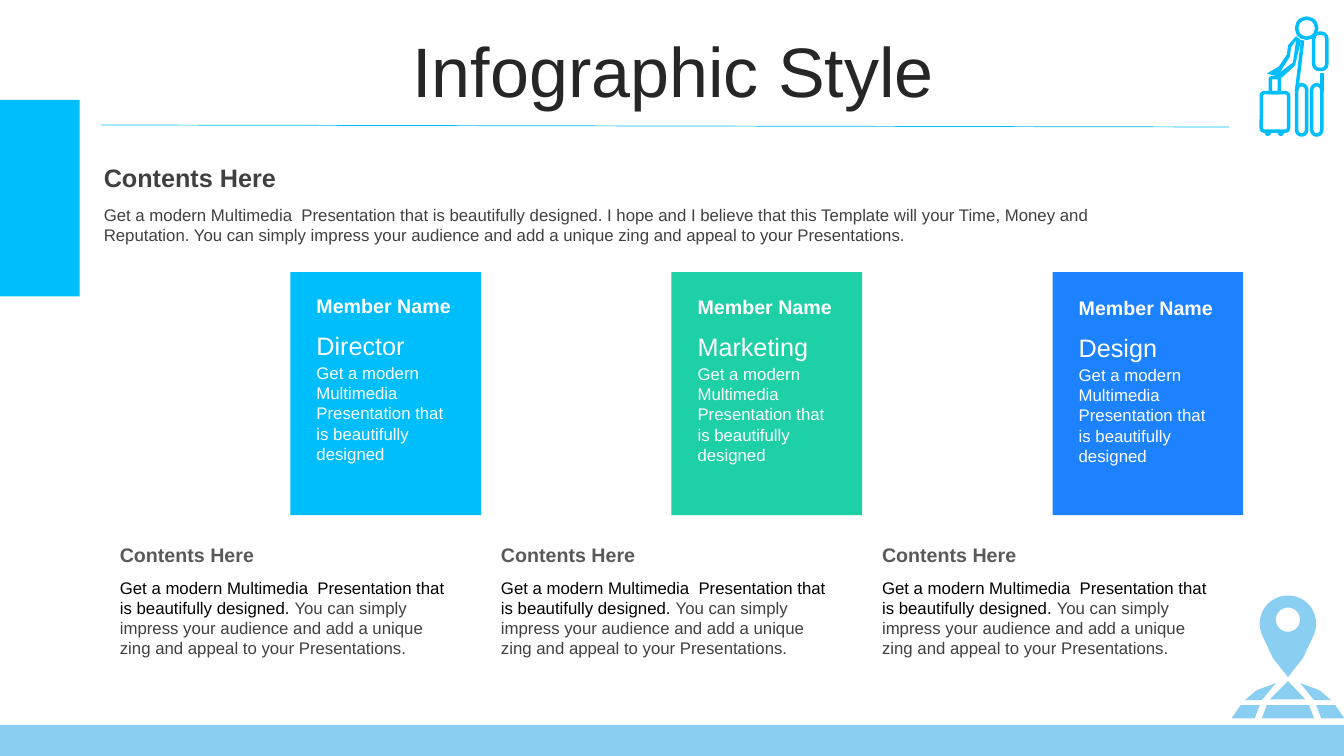
from dataclasses import dataclass
from math import cos, radians, sin

from lxml.etree import SubElement
from pptx import Presentation
from pptx.dml.color import RGBColor
from pptx.enum.shapes import MSO_CONNECTOR as Connector, MSO_SHAPE as Shape
from pptx.enum.text import MSO_ANCHOR as Anchor, MSO_AUTO_SIZE as AutoSize, PP_ALIGN as Align
from pptx.oxml.ns import qn
from pptx.util import Inches, Pt


@dataclass(frozen=True)
class Theme:
    font: str = "Arial"
    cyan: str = "00BDFB"
    green: str = "1ED0A6"
    blue: str = "1C82FF"
    sky: str = "8ACFF1"
    white: str = "FFFFFF"
    black: str = "000000"
    title_ink: str = "262626"
    ink: str = "404040"
    heading_ink: str = "595959"
    title_size: int = 50
    heading_size: int = 18
    label_size: int = 14
    body_size: int = 12


def write(frame, text, *, font, size, color, bold=False, align=None, spacing=None,
          anchor=Anchor.TOP, fit=AutoSize.NONE, left_inset=0.1):
    frame.word_wrap = True
    frame.auto_size = fit
    frame.vertical_anchor = anchor
    frame.margin_left = Inches(left_inset)
    frame.margin_right = Inches(0.1)
    frame.margin_top = frame.margin_bottom = Inches(0.05)
    paragraph = frame.paragraphs[0]
    paragraph.alignment = align
    paragraph.line_spacing = spacing
    for words, ink in ([(text, color)] if isinstance(text, str) else text):
        run = paragraph.add_run()
        run.text = words
        run.font.name = font
        run.font.size = Pt(size)
        run.font.bold = bold
        run.font.color.rgb = RGBColor.from_string(ink)


def arc(x, y, radius, start=0, end=360):
    steps = 36
    angles = [radians(start + (end - start) * i / steps) for i in range(steps + 1)]
    return [(x + radius * cos(a), y + radius * sin(a)) for a in angles]


class Board:
    def __init__(self, slide, theme):
        self.shapes = slide.shapes
        self.theme = theme

    def paint(self, shape, color):
        shape.shadow.inherit = False
        shape.fill.solid()
        shape.fill.fore_color.rgb = RGBColor.from_string(color)
        shape.line.fill.background()

    def title(self, text, box):
        heading = self.shapes.title
        heading.left, heading.top, heading.width, heading.height = map(Inches, box)
        write(heading.text_frame, text, font=self.theme.font, size=self.theme.title_size,
              color=self.theme.title_ink, align=Align.CENTER, spacing=0.8, anchor=Anchor.MIDDLE)

    def text(self, text, box, **style):
        frame = self.shapes.add_textbox(*map(Inches, box)).text_frame
        write(frame, text, font=self.theme.font, **style)

    def block(self, box, color):
        self.paint(self.shapes.add_shape(Shape.RECTANGLE, *map(Inches, box)), color)

    def ring(self, box, color, weight, kind=Shape.ROUNDED_RECTANGLE, rounding=None):
        ring = self.shapes.add_shape(kind, *map(Inches, box))
        ring.shadow.inherit = False
        ring.fill.background()
        ring.line.color.rgb = RGBColor.from_string(color)
        ring.line.width = Pt(weight)
        if rounding is not None:
            ring.adjustments[0] = rounding

    def rule(self, start, end, color, weight):
        line = self.shapes.add_connector(Connector.STRAIGHT, *map(Inches, start + end))
        line.line.color.rgb = RGBColor.from_string(color)
        line.line.width = Pt(weight)
        SubElement(line._element.spPr, qn("a:effectLst"))

    def outline(self, contours, color):
        scaled = [[(x * 1000, y * 1000) for x, y in contour] for contour in contours]
        builder = self.shapes.build_freeform(*scaled[0][0], scale=Inches(0.001))
        builder.add_line_segments(scaled[0][1:], close=True)
        for contour in scaled[1:]:
            builder.move_to(*contour[0])
            builder.add_line_segments(contour[1:], close=True)
        self.paint(builder.convert_to_shape(), color)

    def map_pin(self, axis, color):
        def mirror(points):
            return [(2 * axis - x, y) for x, y in points]

        drop = [(axis, 6.72), (axis - 0.15, 6.53)] + arc(axis, 6.19, 0.28, 158, 382)
        self.outline([drop + [(axis + 0.15, 6.53)], arc(axis, 6.15, 0.12)], color)
        self.outline([[(axis, 6.76), (12.95, 6.94), (12.6, 6.94)]], color)
        front = [(12.52, 7.13), (12.57, 7)]
        self.outline([front + mirror(front)[::-1]], color)
        for tile in ([(12.5, 7), (12.45, 7.13), (12.22, 7.13), (12.31, 7)],
                     [(12.66, 6.78), (12.52, 6.95), (12.35, 6.95), (12.47, 6.85)]):
            self.outline([tile], color)
            self.outline([mirror(tile)], color)

    def traveller(self, color):
        stroke = 2.5
        self.ring((12.86, 0.18, 0.2, 0.2), color, stroke, Shape.OVAL)
        self.ring((12.51, 0.92, 0.27, 0.38), color, stroke, rounding=0.1)
        self.ring((12.6, 0.77, 0.09, 0.15), color, stroke)
        for wheel in (12.58, 12.71):
            self.outline([arc(wheel, 1.32, 0.03)], color)
        for leg in (12.86, 13.01):
            self.ring((leg, 0.84, 0.1, 0.5), color, stroke, rounding=0.5)
        self.ring((13.03, 0.33, 0.13, 0.36), color, stroke, rounding=0.4)
        self.rule((12.92, 0.4), (12.86, 0.9), color, stroke)
        self.rule((13.11, 0.72), (13.11, 0.9), color, stroke)
        sleeve = [(12.86, 0.36), (12.78, 0.45), (12.77, 0.54), (12.69, 0.66),
                  (12.57, 0.73), (12.72, 0.77), (12.85, 0.65), (12.91, 0.4)]
        gap = [(12.86, 0.4), (12.81, 0.47), (12.8, 0.56), (12.7, 0.72), (12.83, 0.62)]
        self.outline([sleeve, gap], color)


def main():
    deck = Presentation()
    deck.slide_width, deck.slide_height = Inches(13.33), Inches(7.5)
    theme = Theme()
    board = Board(deck.slides.add_slide(deck.slide_layouts[5]), theme)

    offer = "Get a modern Multimedia  Presentation that is beautifully designed"
    appeal = "impress your audience and add a unique zing and appeal to your Presentations."
    heading = "Contents Here"
    members = [("Director", theme.cyan), ("Marketing", theme.green), ("Design", theme.blue)]
    pitch = 3.78

    for column, (_, color) in enumerate(members):
        board.block((2.88 + pitch * column, 2.7, 1.89, 2.41), color)
    board.block((0, 7.19, 13.33, 0.31), theme.sky)
    board.map_pin(12.78, theme.sky)

    board.title("Infographic Style", (0.35, 0.37, 12.66, 0.79))
    board.text(f"{offer}. I hope and I believe that this Template will your Time, Money and "
               f"Reputation. You can simply {appeal}", (1.03, 1.98, 10, 0.61),
               size=theme.body_size, color=theme.ink, left_inset=0)
    board.text(heading, (1.03, 1.58, 8.74, 0.36), size=theme.heading_size, color=theme.ink,
               bold=True, anchor=Anchor.MIDDLE, left_inset=0)

    grow = AutoSize.SHAPE_TO_FIT_TEXT
    for column, (role, _) in enumerate(members):
        left, top = 3.04 + pitch * column, 2.87 + 0.01 * column
        board.text(offer, (left, top + 0.68, 1.58, 1.11), size=theme.body_size,
                   color=theme.white, fit=grow)
        board.text(role, (left, top + 0.36, 1.58, 0.3), size=theme.heading_size,
                   color=theme.white, fit=grow)
        board.text("Member Name", (left, top, 1.58, 0.34), size=theme.label_size,
                   color=theme.white, bold=True, fit=grow)

        left = 1.09 + pitch * column
        board.text(heading, (left, 5.34, 3.45, 0.34), size=theme.label_size,
                   color=theme.heading_ink, bold=True, fit=grow)
        board.text([(f"{offer}. ", theme.black), (f"You can simply {appeal}", theme.ink)],
                   (left, 5.68, 3.45, 0.91), size=theme.body_size, color=theme.ink, fit=grow)

    board.block((0, 0.99, 0.79, 1.95), theme.cyan)
    board.rule((1, 1.24), (12.19, 1.26), theme.cyan, 0.5)
    board.traveller(theme.cyan)

    deck.save("out.pptx")


if __name__ == "__main__":
    main()
